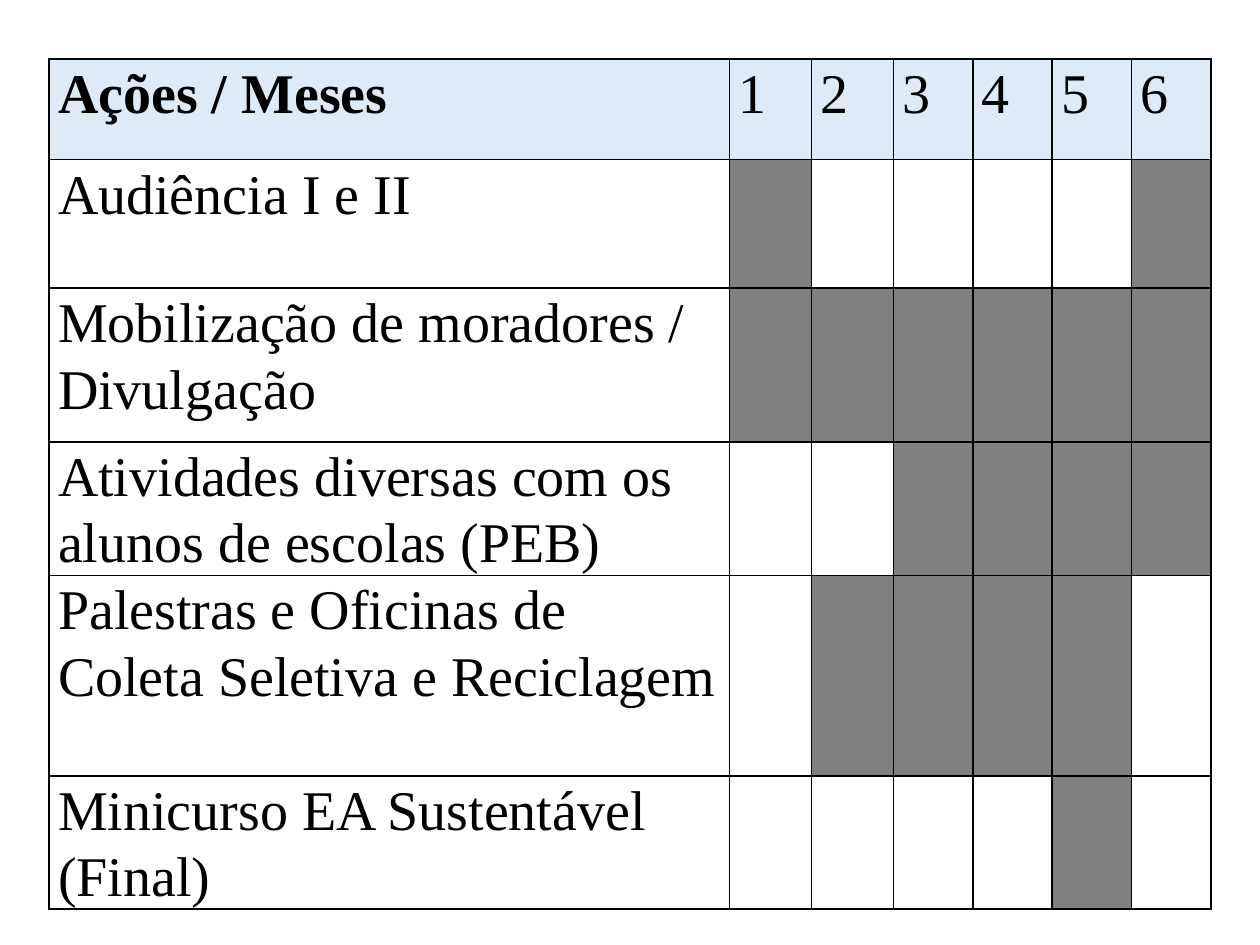
from dataclasses import dataclass

from lxml import etree
from pptx import Presentation
from pptx.dml.color import RGBColor
from pptx.oxml.ns import qn
from pptx.util import Cm, Pt


@dataclass(frozen=True)
class Theme:
    """Colours, font and sizes of the slide."""
    font: str = "Times New Roman"
    size: int = 32
    ink: str = "000000"
    head: str = "DEEAF6"
    busy: str = "808080"
    free: str = "FFFFFF"
    line: int = 1
    lead: float = 1.07


THEME = Theme()
SIDES = ("a:lnL", "a:lnR", "a:lnT", "a:lnB")
MONTHS = (1.65, 1.65, 1.6, 1.6, 1.6, 1.6)
HEAD = 2.03
TASKS = (
    ("Audiência I e II", 2.59, {1, 6}),
    ("Mobilização de moradores / Divulgação", 3.1, {1, 2, 3, 4, 5, 6}),
    ("Atividades diversas com os alunos de escolas (PEB)", 2.69, {3, 4, 5, 6}),
    ("Palestras e Oficinas de Coleta Seletiva e Reciclagem", 4.04, {2, 3, 4, 5}),
    ("Minicurso EA Sustentável (Final)", 2.21, {5}),
)


def write(cell, text, bold=False, size=THEME.size, color=THEME.ink):
    """Put formatted text in a cell."""
    par = cell.text_frame.paragraphs[0]
    par.line_spacing = THEME.lead
    run = par.add_run()
    run.text = text
    font = run.font
    font.name, font.size, font.bold = THEME.font, Pt(size), bold
    font.color.rgb = RGBColor.from_string(color)


def paint(cell, color):
    """Give a cell its margins, borders and fill."""
    cell.margin_left = cell.margin_right = Cm(0.18)
    cell.margin_top = cell.margin_bottom = 0
    props = cell._tc.get_or_add_tcPr()
    for side in SIDES:
        line = etree.SubElement(props, qn(side), w=str(Pt(THEME.line)))
        fill = etree.SubElement(line, qn("a:solidFill"))
        etree.SubElement(fill, qn("a:srgbClr"), val=THEME.ink)
    cell.fill.solid()
    cell.fill.fore_color.rgb = RGBColor.from_string(color)


def plan(slide, left, top, width):
    """Draw the table of tasks by month in a box."""
    cols = (width - sum(MONTHS), *MONTHS)
    rows = (HEAD, *(high for _, high, _ in TASKS))
    frame = slide.shapes.add_table(
        len(rows), len(cols), Cm(left), Cm(top), Cm(width), Cm(sum(rows)))
    table = frame.table
    table.first_row = table.horz_banding = False
    for col, wide in zip(table.columns, cols):
        col.width = Cm(wide)
    for row, high in zip(table.rows, rows):
        row.height = Cm(high)
    for month in range(len(cols)):
        cell = table.cell(0, month)
        paint(cell, THEME.head)
        write(cell, str(month) if month else "Ações / Meses", bold=not month)
    for num, (name, _, busy) in enumerate(TASKS, 1):
        for month in range(len(cols)):
            paint(table.cell(num, month),
                  THEME.busy if month in busy else THEME.free)
        write(table.cell(num, 0), name)


def main():
    """Build and save the slide."""
    deck = Presentation()
    deck.slide_width, deck.slide_height = Cm(25.4), Cm(19.05)
    slide = deck.slides.add_slide(deck.slide_layouts[6])
    plan(slide, left=0.99, top=1.19, width=23.42)
    deck.save("out.pptx")


if __name__ == "__main__":
    main()
